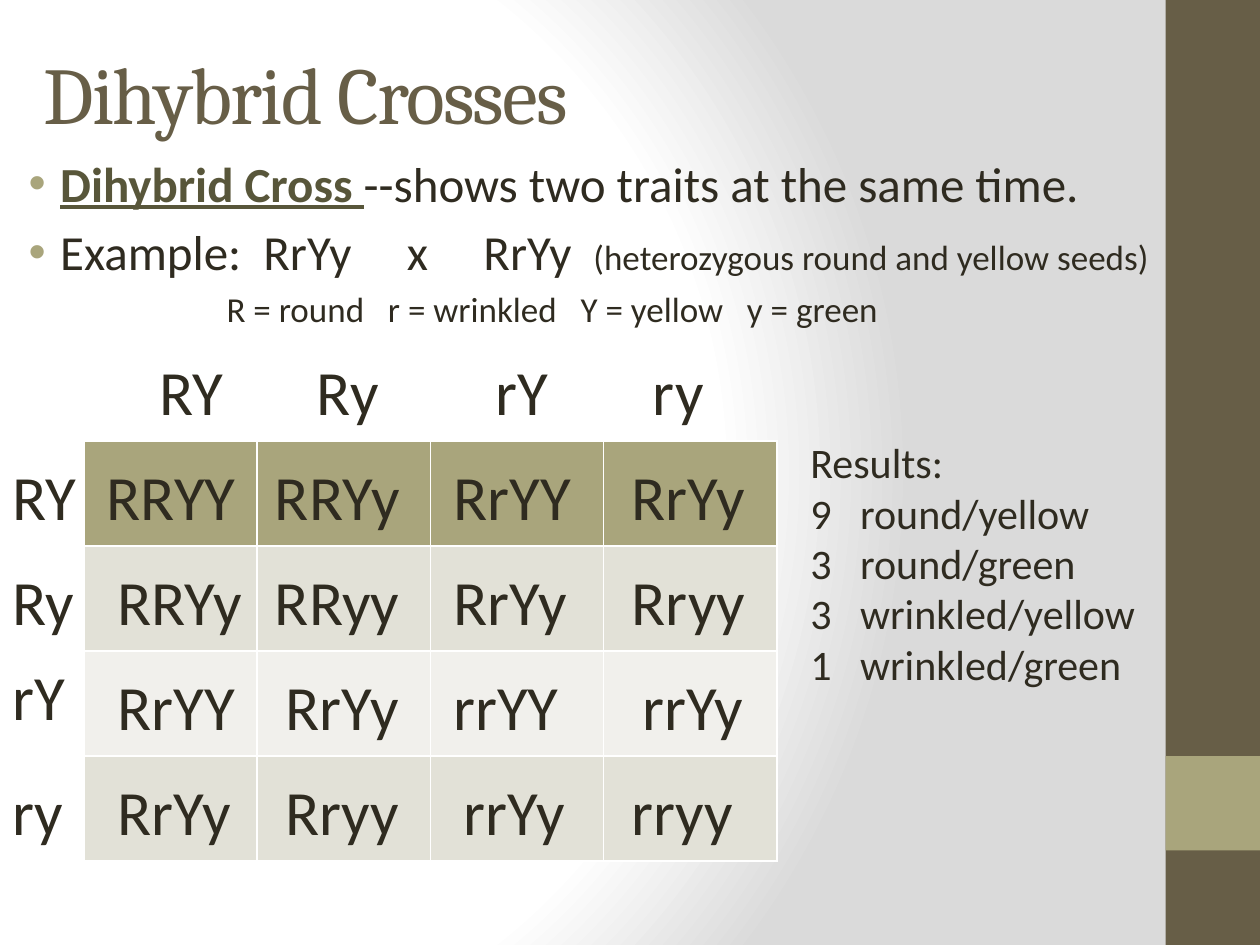
from pptx import Presentation
from pptx import util as u
from pptx.dml.color import RGBColor
from pptx.enum import shapes, text
from pptx.oxml import parse_xml
from pptx.oxml.ns import nsdecls, qn

INK = RGBColor(0x2F, 0x2B, 0x20)
BROWN = RGBColor(0x67, 0x5E, 0x47)
KHAKI = RGBColor(0xA9, 0xA5, 0x7C)
OLIVE = RGBColor(0x58, 0x56, 0x3A)
BAND_DARK = RGBColor(0xE2, 0xE1, 0xD7)
BAND_LIGHT = RGBColor(0xF1, 0xF0, 0xEC)
ROW_FILLS = [KHAKI, BAND_DARK, BAND_LIGHT, BAND_DARK]

# Genotype labels, as (text, grid column) for each grid row
LABELS = {
    33: [("RY", 14), ("Ry", 29), ("rY", 46), ("ry", 61)],
    43: [("RY", 0), ("RRYY", 9), ("RRYy", 25), ("RrYY", 42), ("RrYy", 59)],
    53: [("Ry", 0), ("RRYy", 10), ("RRyy", 25), ("RrYy", 42), ("Rryy", 59)],
    62: [("rY", 0)],
    63: [("RrYY", 10), ("RrYy", 26), ("rrYY", 42), ("rrYy", 60)],
    73: [("ry", 0), ("RrYy", 10), ("Rryy", 26), ("rrYy", 43), ("rryy", 59)],
}
LETTER_WIDTHS = {"R": 0.27, "r": 0.18, "Y": 0.25, "y": 0.24}
RESULTS = ["Results:", "9   round/yellow", "3   round/green",
           "3   wrinkled/yellow", "1   wrinkled/green"]


def grid(units):
    """Length of a number of grid units, twelve to the inch."""
    return u.Inches(units / 12)


def style(span, size, color=INK, name="Calibri"):
    span.font.size = u.Pt(size)
    span.font.name = name
    span.font.color.rgb = color


def add_text(page, lines, col, row, width, height, size, wrap=False):
    """Add a text box with one paragraph for each line."""
    box = page.shapes.add_textbox(grid(col), grid(row), u.Inches(width), u.Inches(height))
    frame = box.text_frame
    frame.text = "\n".join(lines)
    frame.word_wrap = wrap
    if not wrap:
        frame.auto_size = text.MSO_AUTO_SIZE.SHAPE_TO_FIT_TEXT
    for para in frame.paragraphs:
        for span in para.runs:
            style(span, size)
    return frame


def add_background(page):
    page.background.fill.gradient()
    gradient = page.element.find(".//" + qn("a:gradFill"))
    stops = "".join(
        f'<a:gs pos="{share}000"><a:srgbClr val="{color}"/></a:gs>'
        for share, color in [(0, "FFFFFF"), (75, "FFFFFF"), (100, "DADADA")])
    gradient.getparent().replace(gradient, parse_xml(
        f'<a:gradFill {nsdecls("a")} rotWithShape="1"><a:gsLst>{stops}</a:gsLst>'
        '<a:path path="circle"><a:fillToRect l="20000" t="50000" r="100000" b="50000"/>'
        '</a:path></a:gradFill>'))


def add_side_block(page, row, height, color):
    block = page.shapes.add_shape(
        shapes.MSO_SHAPE.RECTANGLE, grid(111), grid(row), grid(9), grid(height))
    block.shadow.inherit = False
    block.fill.solid()
    block.fill.fore_color.rgb = color
    block.line.fill.background()


def add_title(page):
    frame = add_text(page, ["Dihybrid Crosses"], 3, 3, 8.33, 0.97, 46, wrap=True)
    frame.vertical_anchor = text.MSO_ANCHOR.MIDDLE
    span = frame.paragraphs[0].runs[0]
    style(span, 46, BROWN, "Cambria")
    span.font._element.set("spc", "-100")


def format_para(para, size, indent, bullet=False):
    """Set the space above and the left indent, with a hanging bullet if asked."""
    para.space_before = u.Pt(size * 0.2)
    props = para._p.get_or_add_pPr()
    props.set("marL", str(u.Inches(indent)))
    if bullet:
        props.set("indent", str(u.Inches(-0.25)))
        props.append(parse_xml(
            f'<a:buClr {nsdecls("a")}><a:srgbClr val="{KHAKI}"/></a:buClr>'))
        props.append(parse_xml(f'<a:buFont {nsdecls("a")} typeface="Arial"/>'))
        props.append(parse_xml(f'<a:buChar {nsdecls("a")} char="•"/>'))


def add_body(page):
    frame = add_text(page, ["Dihybrid Cross ", "Example:  RrYy     x     RrYy  ",
                            "R = round   r = wrinkled   Y = yellow   y = green"],
                     0, 14, 9.33, 1.67, 28, wrap=True)
    definition, example, key = frame.paragraphs

    term = definition.runs[0]
    style(term, 28, OLIVE)
    term.font.bold = term.font.underline = True
    for para, words, size in [
            (definition, "--shows two traits at the same time.", 28),
            (example, "(heterozygous round and yellow seeds)", 20)]:
        span = para.add_run()
        span.text = words
        style(span, size)
        format_para(para, 28, 0.38, bullet=True)

    style(key.runs[0], 20)
    format_para(key, 20, 1.7)


def add_square(page):
    """Add the four-by-four Punnett square."""
    table = page.shapes.add_table(4, 4, grid(8), grid(42), grid(66), grid(40)).table
    for row, color in zip(table.rows, ROW_FILLS):
        for cell in row.cells:
            cell.fill.solid()
            cell.fill.fore_color.rgb = color


def add_labels(page):
    for row, labels in LABELS.items():
        for label, col in labels:
            width = 0.2 + sum(LETTER_WIDTHS[letter] for letter in label)
            add_text(page, [label], col, row, width, 0.71, 36)


def main():
    deck = Presentation()
    deck.slide_width, deck.slide_height = grid(120), grid(90)
    page = deck.slides.add_slide(deck.slide_layouts[6])
    add_background(page)
    add_side_block(page, 0, 90, BROWN)
    add_side_block(page, 72, 9, KHAKI)
    add_title(page)
    add_body(page)
    add_square(page)
    add_labels(page)
    add_text(page, RESULTS, 76, 41, 2.8, 2.12, 24)
    deck.save("out.pptx")


if __name__ == "__main__":
    main()
